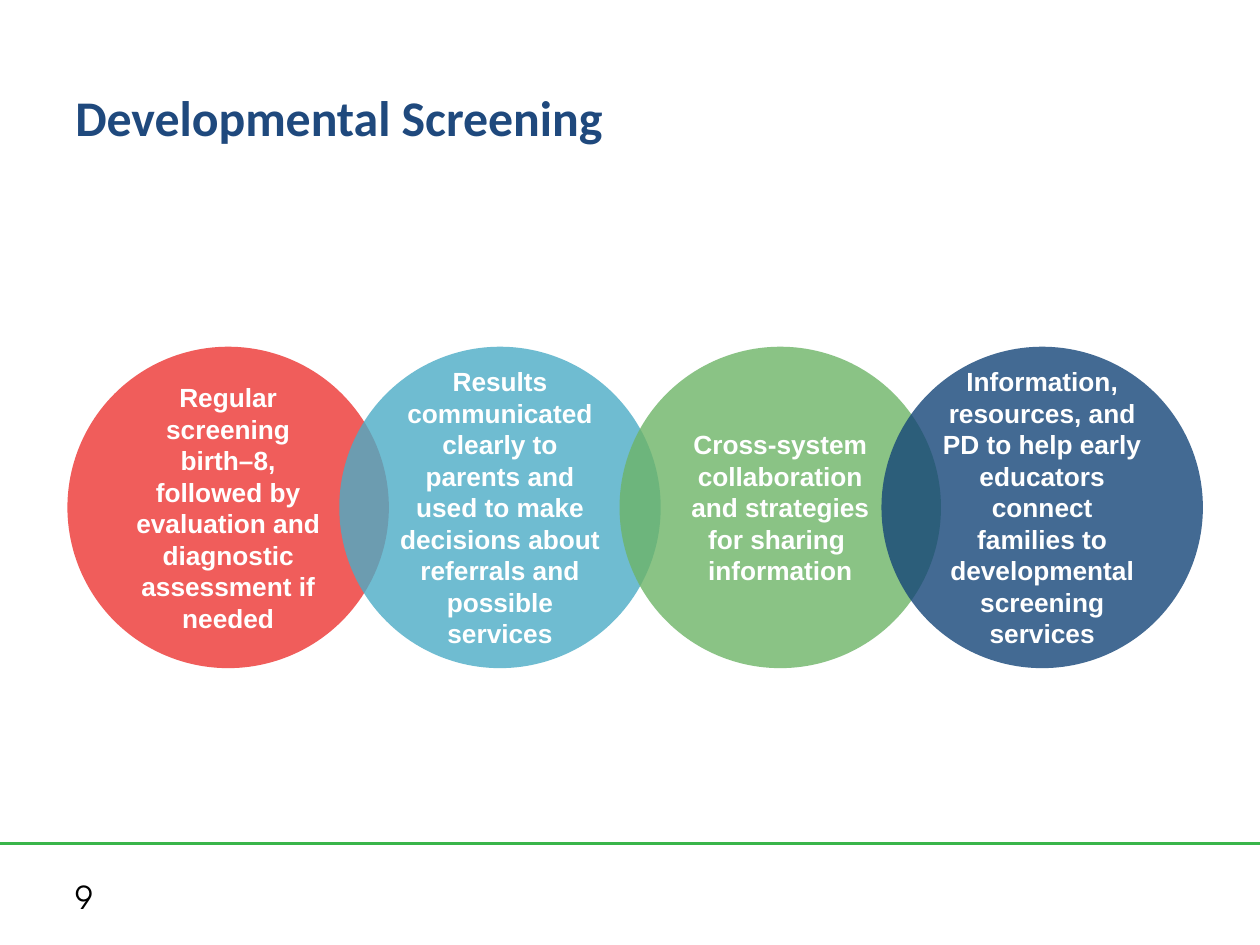
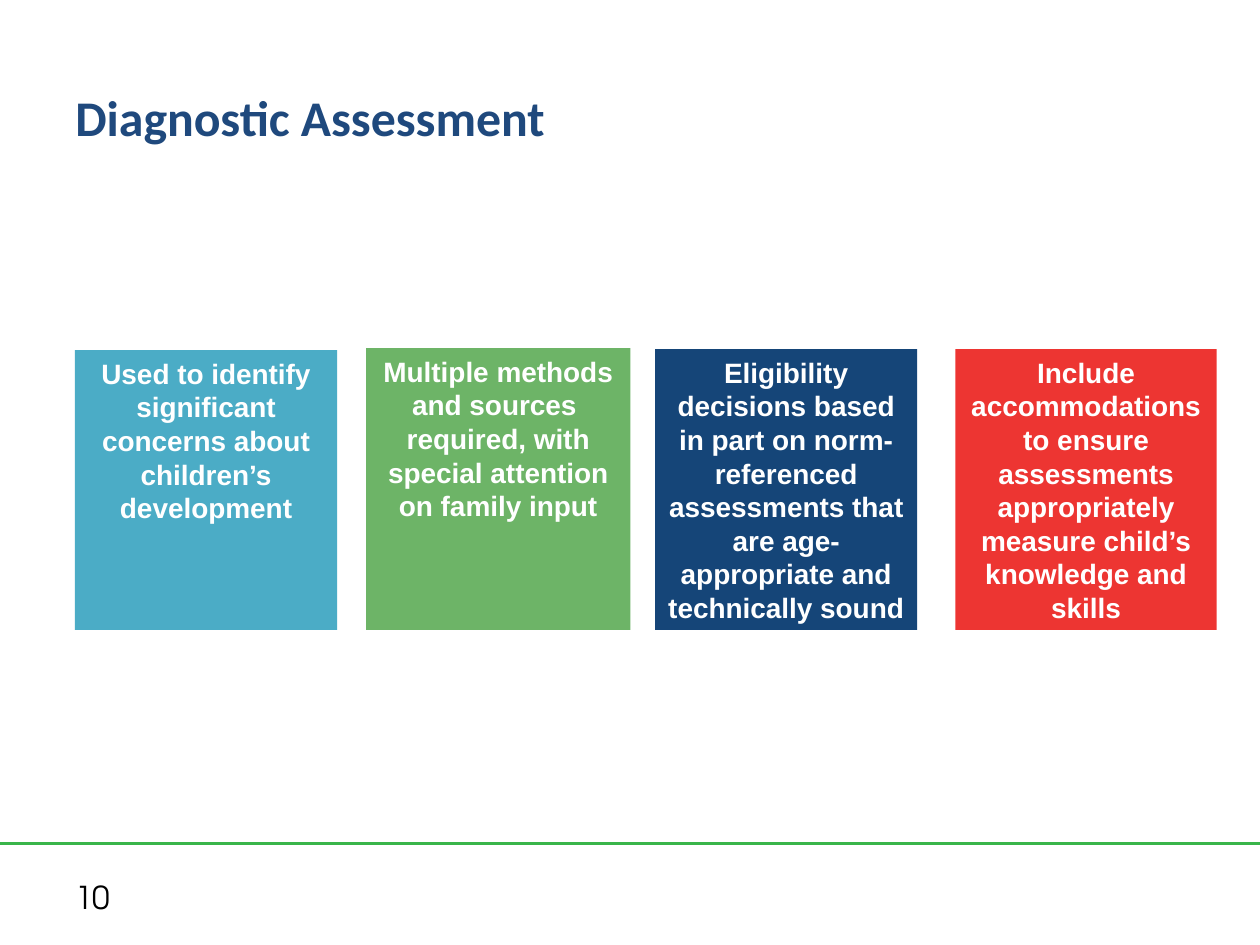
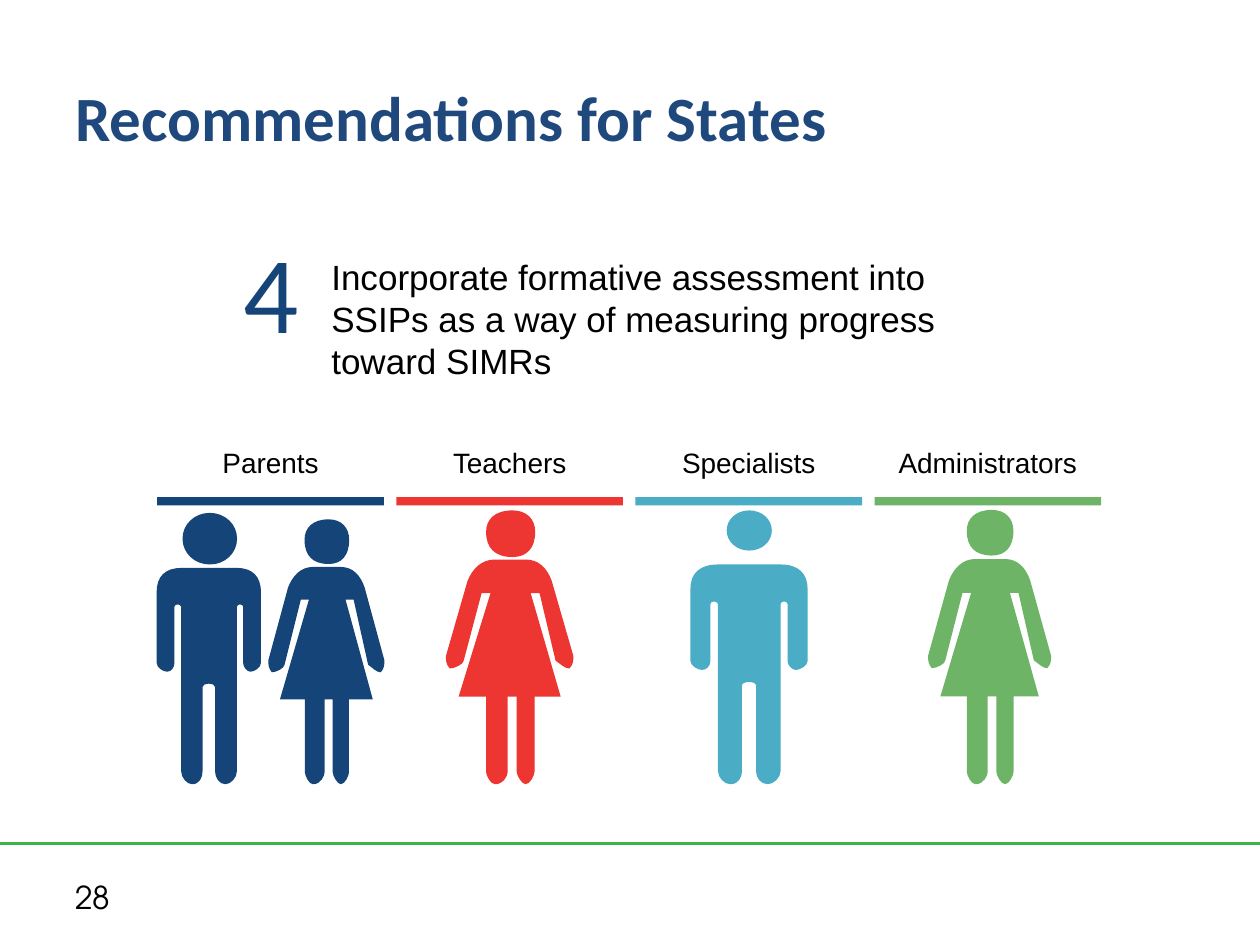
from dataclasses import dataclass

from lxml import etree
from pptx import Presentation
from pptx.dml.color import RGBColor
from pptx.enum.shapes import MSO_CONNECTOR, MSO_SHAPE
from pptx.enum.text import MSO_ANCHOR, PP_ALIGN
from pptx.oxml.ns import qn
from pptx.util import Cm, Pt

LEFT, CENTER = PP_ALIGN.LEFT, PP_ALIGN.CENTER
TOP, MIDDLE = MSO_ANCHOR.TOP, MSO_ANCHOR.MIDDLE
OVAL, RECT = MSO_SHAPE.OVAL, MSO_SHAPE.RECTANGLE
STRAIGHT = MSO_CONNECTOR.STRAIGHT


@dataclass(frozen=True)
class Theme:
    red: str = "ED3532"
    teal: str = "4BACC6"
    green: str = "6DB467"
    navy: str = "154578"
    title: str = "1F497D"
    rule: str = "39B54A"
    white: str = "FFFFFF"
    black: str = "000000"
    body: str = "Arial"
    head: str = "Calibri"
    foot: str = "TeX Gyre Adventor"
    title_size: float = 28.5
    big_title: float = 36
    circle: float = 15
    card: float = 16
    label: float = 16
    point: float = 20
    digit: float = 62.3
    page: float = 18


T = Theme()
WIDTH, HEIGHT = 25.4, 19.05

# Left edge, fill, text
CIRCLES = [
    (1.36, T.red, "Regular screening birth–8, followed by evaluation and "
                  "diagnostic assessment if needed"),
    (6.84, T.teal, "Results communicated clearly to parents and used to make "
                   "decisions about referrals and possible services"),
    (12.49, T.green, "Cross-system collaboration and strategies for sharing \v"
                     "information"),
    (17.77, T.navy, "Information, resources, and PD to help early educators "
                    "connect families to developmental screening services"),
]
# Left edge, top, width, fill, text
CARDS = [
    (1.51, 7.06, 5.29, T.teal,
     "Used to identify significant concerns about children’s development"),
    (7.38, 7.02, 5.33, T.green,
     "Multiple methods and sources \vrequired, with special attention on "
     "family input"),
    (13.21, 7.04, 5.28, T.navy,
     "Eligibility decisions based in part on norm-referenced assessments "
     "that are age-appropriate and technically sound"),
    (19.26, 7.04, 5.27, T.red,
     "Include accommodations to ensure assessments appropriately measure "
     "child’s knowledge and skills"),
]
FLOOR = 12.7
POINT = ("Incorporate formative assessment into SSIPs as a way of measuring "
         "progress toward SIMRs")
# Text, label width, fill
ROLES = [("Parents", 2.67, T.navy), ("Teachers", 2.82, T.red),
         ("Specialists", 3.23, T.teal), ("Administrators", 4.17, T.green)]

# Kind, fill, body (left, top, width), head (left, top, width, height)
PEOPLE = [
    ("man", T.navy, (3.16, 11.45, 2.1), (3.68, 10.34, 1.1, 1.04)),
    ("woman", T.navy, (5.41, 11.43, 2.34), (6.14, 10.47, 0.9, 0.9)),
    ("woman", T.red, (8.99, 11.28, 2.57), (9.8, 10.29, 0.99, 0.94)),
    ("man", T.teal, (13.92, 11.38, 2.36), (14.65, 10.29, 0.91, 0.81)),
    ("woman", T.green, (18.71, 11.27, 2.48), (19.49, 10.28, 0.94, 0.92)),
]
FEET = 15.81

# Outlines in percent of the box: pairs are corners, sixes are curves
BODIES = {
    "man": [
        (77, 0), (23.5, 0), (8, 0, 0, 4, 0, 11), (0, 44),
        (0, 46, 6, 48, 10, 48), (14, 48, 17, 46, 17, 44), (17, 18),
        (17, 16.5, 23, 16.5, 23.5, 18), (23.5, 94),
        (23.5, 97, 29, 100, 34, 100), (41, 100, 44, 97, 44, 94), (44, 55),
        (44, 54, 47, 53.5, 50, 53.5), (53, 53.5, 56, 54, 56, 55), (56, 94),
        (56, 97, 60, 100, 66, 100), (71, 100, 77, 97, 77, 94), (77, 18),
        (77, 16.5, 83, 16.5, 83, 18), (83, 44), (83, 46, 87, 48, 90, 48),
        (94, 48, 100, 46, 100, 44), (100, 11), (100, 4, 92, 0, 77, 0)],
    "woman": [
        (62.5, 0), (38.5, 0), (28, 0, 21, 4, 17, 9.5), (0, 43),
        (0, 45, 0, 46.5, 3, 48.5), (7, 48.5, 14, 46.5, 14, 45), (28, 15),
        (35, 15), (10, 61), (31.5, 61), (31.5, 94.5),
        (31.5, 96, 35, 100, 38.5, 100), (45.5, 100, 48.5, 96, 48.5, 94.5),
        (48.5, 61), (55.5, 61), (55.5, 94.5),
        (55.5, 96, 59.5, 100, 62.5, 100), (66, 100, 69.5, 96, 69.5, 94.5),
        (69.5, 61), (90, 61), (66.5, 15), (73.5, 15), (86, 45),
        (90, 46.5, 93, 48.5, 97, 48.5), (100, 46.5, 100, 45, 100, 43),
        (83, 9.5), (79.5, 4, 73, 0, 62.5, 0)],
}
HEADS = {
    "man": [(50, 0), (22, 0, 0, 22, 0, 50), (0, 78, 22, 100, 50, 100),
            (78, 100, 100, 78, 100, 50), (100, 22, 78, 0, 50, 0)],
    "woman": [(54, 100), (83, 100, 100, 81, 100, 46), (100, 19, 83, 0, 54, 0),
              (18, 0, 0, 19, 0, 46), (0, 81, 18, 100, 54, 100)],
}


def color(code):
    return RGBColor.from_string(code)


def write(shape, text, size, ink, font=T.body, bold=False, align=LEFT,
          anchor=TOP, wrap=True):
    frame = shape.text_frame
    frame.word_wrap = wrap
    frame.vertical_anchor = anchor
    frame.text = text
    para = frame.paragraphs[0]
    para.alignment = align
    for run in para.runs:
        run.font.size = Pt(size)
        run.font.name = font
        run.font.bold = bold
        run.font.color.rgb = color(ink)


def label(slide, box, text, size, ink, **style):
    shape = slide.shapes.add_textbox(*map(Cm, box))
    write(shape, text, size, ink, **style)
    return shape


def paint(shape, fill):
    shape.shadow.inherit = False
    shape.fill.solid()
    shape.fill.fore_color.rgb = color(fill)
    shape.line.fill.background()


def block(slide, kind, box, fill):
    shape = slide.shapes.add_shape(kind, *map(Cm, box))
    paint(shape, fill)
    return shape


def fade(shape, percent):
    """Set the opacity of a solid fill."""
    tone = shape._element.spPr.find(qn("a:solidFill"))[0]
    etree.SubElement(tone, qn("a:alpha"), val=str(percent * 1000))


def draw(slide, parts, box, fill):
    """Build a freeform through the ends, then bend its curved edges."""
    left, top, wide, high = box

    def place(x, y):
        return Cm(left + x * wide / 100), Cm(top + y * high / 100)

    pen = slide.shapes.build_freeform(*place(*parts[0]))
    pen.add_line_segments([place(*part[-2:]) for part in parts[1:]],
                          close=True)
    shape = pen.convert_to_shape()
    paint(shape, fill)
    edges = list(shape._element.iter(qn("a:lnTo")))
    for edge, part in zip(edges, parts[1:]):
        if len(part) == 2:
            continue
        bend = etree.Element(qn("a:cubicBezTo"))
        for x, y in zip(part[::2], part[1::2]):
            across, down = place(x, y)
            etree.SubElement(bend, qn("a:pt"), x=str(across - shape.left),
                             y=str(down - shape.top))
        edge.getparent().replace(edge, bend)


def start(deck, title, page, size=T.title_size):
    """Add a slide with the shared title, rule and page number."""
    slide = deck.slides.add_slide(deck.slide_layouts[6])
    rule = slide.shapes.add_connector(STRAIGHT, 0, Cm(17), Cm(WIDTH), Cm(17))
    rule.line.color.rgb = color(T.rule)
    rule.line.width = Pt(1.5)
    etree.SubElement(rule._element.spPr, qn("a:effectLst"))
    label(slide, (1.27, 17.58, 5.92, 1.02), str(page), T.page, T.black,
          font=T.foot)
    label(slide, (1.27, 0.76, 22.86, 3.18), title, size, T.title,
          font=T.head, bold=True, anchor=MIDDLE)
    return slide


def screening(deck):
    slide = start(deck, "Developmental Screening", 9)
    for left, fill, text in CIRCLES:
        shape = block(slide, OVAL, (left, 6.99, 6.48, 6.48), fill)
        fade(shape, 80)
        write(shape, text, T.circle, T.white, bold=True, align=CENTER,
              anchor=MIDDLE)


def diagnosis(deck):
    slide = start(deck, "Diagnostic Assessment", 10)
    for left, top, wide, fill, text in CARDS:
        shape = block(slide, RECT, (left, top, wide, FLOOR - top), fill)
        write(shape, text, T.card, T.white, bold=True, align=CENTER)


def advice(deck):
    slide = start(deck, "Recommendations for States", 28, T.big_title)
    label(slide, (4.65, 4.4, 2.06, 2.92), "4", T.digit, T.navy, font=T.head)
    point = label(slide, (6.68, 5.14, 12.6, 2.57), POINT, T.point, T.black,
                  anchor=MIDDLE)
    frame = point.text_frame
    frame.margin_left = frame.margin_right = 0
    frame.margin_top = frame.margin_bottom = 0
    bar = 4.57
    for i, (role, wide, fill) in enumerate(ROLES):
        left = 3.17 + i * 4.82
        label(slide, (left + (bar - wide) / 2, 8.85, wide, 0.94), role,
              T.label, T.black, align=CENTER, wrap=False)
        block(slide, RECT, (left, 10.02, bar, 0.17), fill)
    for kind, fill, body, head in PEOPLE:
        draw(slide, BODIES[kind], (*body, FEET - body[1]), fill)
        draw(slide, HEADS[kind], head, fill)


def main():
    deck = Presentation()
    deck.slide_width, deck.slide_height = Cm(WIDTH), Cm(HEIGHT)
    screening(deck)
    diagnosis(deck)
    advice(deck)
    deck.save("out.pptx")


if __name__ == "__main__":
    main()
